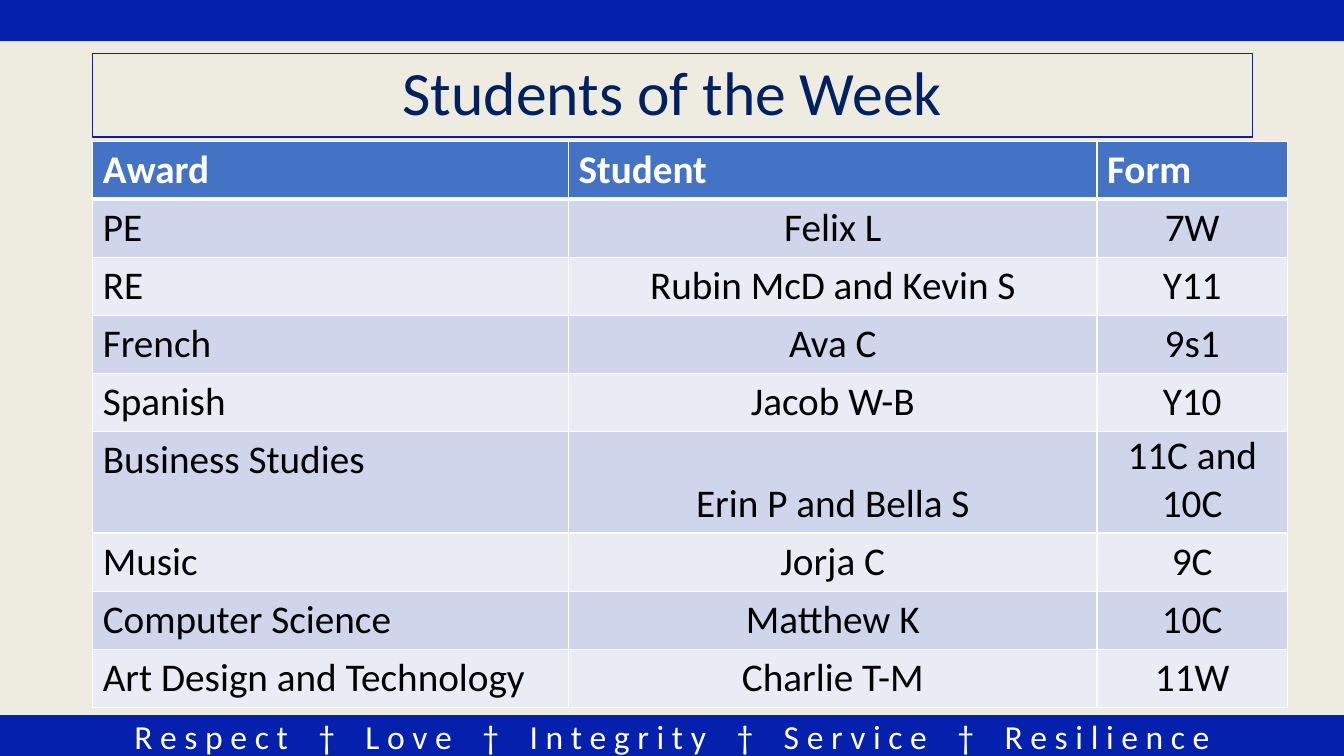
"""Build the Students of the Week slide."""
from lxml import etree
from pptx import Presentation
from pptx.dml.color import RGBColor
from pptx.enum.shapes import MSO_SHAPE as SHAPE
from pptx.enum.text import MSO_ANCHOR as ANCHOR, PP_ALIGN as ALIGN
from pptx.oxml.ns import qn
from pptx.util import Inches, Pt

TITLE = "Students of the Week"
VALUES = ["R e s p e c t", "L o v e", "I n t e g r i t y", "S e r v i c e", "R e s i l i e n c e"]
AWARDS = [
    ("Award", "Student", "Form"),
    ("PE", "Felix L", "7W"),
    ("RE", "Rubin McD and Kevin S", "Y11"),
    ("French", "Ava C", "9s1"),
    ("Spanish", "Jacob W-B", "Y10"),
    ("Business Studies", "Erin P and Bella S", "11C and 10C"),
    ("Music", "Jorja C", "9C"),
    ("Computer Science", "Matthew K", "10C"),
    ("Art Design and Technology", "Charlie T-M", "11W"),
]
COLORS = {"page": "EEECE1", "band": "0420AC", "title": "002060", "white": "FFFFFF",
          "black": "000000", "head": "4472C4", "odd": "CFD5EA", "even": "E9EBF5"}
FONT = "Calibri"
WIDTH, HEIGHT, BAND = 13.33, 7.5, 0.4
LEFT, COLUMNS, ROW = 0.92, (4.72, 5.24, 1.89), 0.41
GAP_SPACING = 1630


def rgb(name):
    return RGBColor.from_string(COLORS[name])


def add_text(p, text, size=28, color="black", bold=False, align=ALIGN.LEFT, spacing=None):
    p.alignment = align
    r = p.add_run()
    r.text = text
    r.font.name, r.font.size, r.font.bold = FONT, Pt(size), bold
    r.font.color.rgb = rgb(color)
    if spacing:
        r.font._element.set("spc", str(spacing))


def add_box(slide, x, y, w, h, fill=None, line=1):
    s = slide.shapes.add_shape(SHAPE.RECTANGLE, Inches(x), Inches(y), Inches(w), Inches(h))
    s.shadow.inherit = False
    if fill:
        s.fill.solid()
        s.fill.fore_color.rgb = rgb(fill)
    else:
        s.fill.background()
    s.line.color.rgb = rgb("band")
    s.line.width = Pt(line)
    s.text_frame.word_wrap = True
    s.text_frame.vertical_anchor = ANCHOR.MIDDLE
    return s.text_frame.paragraphs[0]


def add_borders(cell, **widths):
    tcPr = cell._tc.get_or_add_tcPr()
    for i, (side, width) in enumerate(widths.items()):
        ln = etree.Element(qn(f"a:ln{side}"), w=str(Pt(width)))
        fill = etree.SubElement(ln, qn("a:solidFill"))
        etree.SubElement(fill, qn("a:srgbClr"), val=COLORS["white"])
        tcPr.insert(i, ln)


def fill_cell(cell, text, row, col):
    cell.fill.solid()
    cell.fill.fore_color.rgb = rgb("head" if row == 0 else "odd" if row % 2 else "even")
    add_borders(cell, L=1, R=1, T=3 if row == 1 else 1, B=3 if row == 0 else 1)
    p = cell.text_frame.paragraphs[0]
    if row == 0:
        add_text(p, text, color="white", bold=True)
    elif col == 0:
        add_text(p, text)
    else:
        cell.vertical_anchor = ANCHOR.BOTTOM
        cell.margin_left = cell.margin_right = cell.margin_top = Inches(0.01)
        add_text(p, text, align=ALIGN.CENTER)


def add_awards(slide):
    s = slide.shapes.add_table(len(AWARDS), len(COLUMNS), Inches(LEFT), Inches(1.4),
                               Inches(sum(COLUMNS)), Inches(5.53))
    for column, width in zip(s.table.columns, COLUMNS):
        column.width = Inches(width)
    for i, award in enumerate(AWARDS):
        s.table.rows[i].height = Inches(ROW)
        for j, text in enumerate(award):
            fill_cell(s.table.cell(i, j), text, i, j)
    s.height = Inches(5.53)


def main():
    prs = Presentation()
    prs.slide_width, prs.slide_height = Inches(WIDTH), Inches(HEIGHT)
    slide = prs.slides.add_slide(prs.slide_layouts[6])
    slide.background.fill.solid()
    slide.background.fill.fore_color.rgb = rgb("page")

    footer = add_box(slide, 0, HEIGHT - BAND, WIDTH, BAND, fill="band")
    style = dict(size=24, color="white", align=ALIGN.CENTER)
    for i, value in enumerate(VALUES):
        if i:
            add_text(footer, " ", spacing=GAP_SPACING, **style)
            add_text(footer, "†", **style)
            add_text(footer, " ", spacing=GAP_SPACING, **style)
        add_text(footer, value, **style)

    add_box(slide, 0, 0, WIDTH, BAND, fill="band")
    title = add_box(slide, LEFT, 0.53, 11.5, 0.83, line=0.75)
    title.line_spacing = 0.9
    add_text(title, TITLE, size=44, color="title", align=ALIGN.CENTER)
    add_awards(slide)
    prs.save("out.pptx")


if __name__ == "__main__":
    main()
